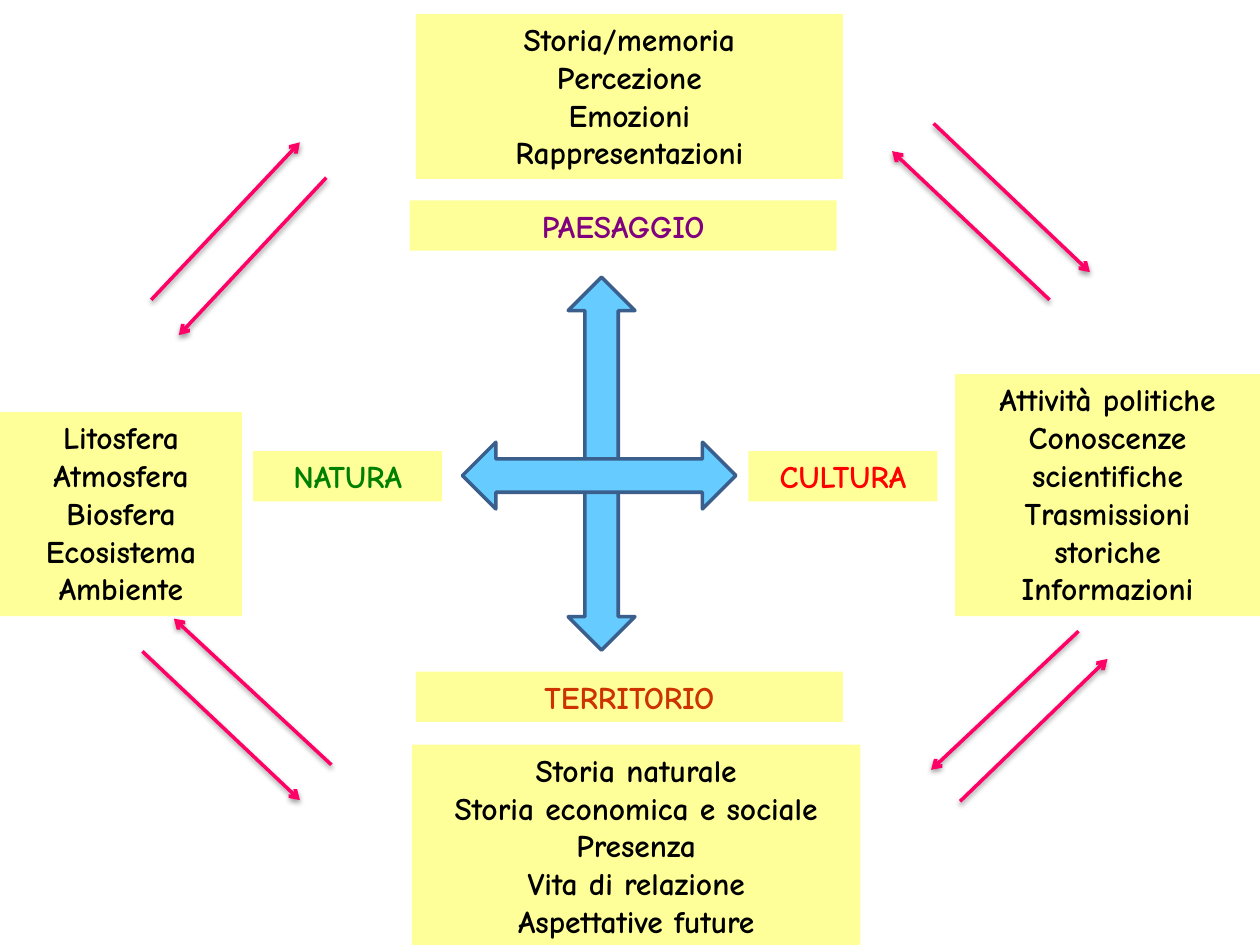
from dataclasses import dataclass

from lxml import etree
from pptx import Presentation
from pptx.dml.color import RGBColor
from pptx.enum.shapes import MSO_CONNECTOR, MSO_SHAPE
from pptx.enum.text import MSO_AUTO_SIZE, PP_ALIGN
from pptx.oxml import parse_xml
from pptx.oxml.ns import nsdecls, qn
from pptx.util import Inches, Pt

STRAIGHT = MSO_CONNECTOR.STRAIGHT
DOUBLE_ARROW = MSO_SHAPE.UP_DOWN_ARROW
CENTER = PP_ALIGN.CENTER
FIT_SHAPE = MSO_AUTO_SIZE.SHAPE_TO_FIT_TEXT
COLUMNS, ROWS = 100, 75


@dataclass(frozen=True)
class Theme:
    font: str = "Comic Neue"
    text_size: int = 18
    line_width: int = 2
    panel: str = "FFFF99"
    text: str = "000000"
    landscape: str = "800080"
    nature: str = "008000"
    territory: str = "CC3300"
    culture: str = "FF0000"
    flow: str = "FF0066"
    axis: str = "66CCFF"
    axis_edge: str = "3A5F8C"


class Diagram:
    def __init__(self, deck, theme):
        self.theme = theme
        self.slide = deck.slides.add_slide(deck.slide_layouts[6])
        self.column = deck.slide_width / COLUMNS
        self.row = deck.slide_height / ROWS

    def place(self, across, down):
        return round(across * self.column), round(down * self.row)

    def panel(self, left, top, width, height, lines, color):
        box = self.slide.shapes.add_textbox(
            *self.place(left, top), *self.place(width, height))
        box.fill.solid()
        box.fill.fore_color.rgb = RGBColor.from_string(self.theme.panel)
        frame = box.text_frame
        frame.word_wrap = True
        frame.auto_size = FIT_SHAPE
        for index, line in enumerate(lines):
            paragraph = frame.add_paragraph() if index else frame.paragraphs[0]
            paragraph.alignment = CENTER
            run = paragraph.add_run()
            run.text = line
            run.font.name = self.theme.font
            run.font.size = Pt(self.theme.text_size)
            run.font.bold = True
            run.font.color.rgb = RGBColor.from_string(color)

    def flow(self, start, end):
        arrow = self.slide.shapes.add_connector(
            STRAIGHT, *self.place(*start), *self.place(*end))
        arrow.line.color.rgb = RGBColor.from_string(self.theme.flow)
        arrow.line.width = Pt(self.theme.line_width)
        etree.SubElement(arrow.line._get_or_add_ln(), qn("a:tailEnd"), type="arrow")
        arrow._element.spPr.append(parse_xml(
            f'<a:effectLst {nsdecls("a")}>'
            f'<a:outerShdw blurRad="{Pt(3.1)}" dist="{Pt(1.6)}" dir="5400000" rotWithShape="0">'
            '<a:srgbClr val="000000"><a:alpha val="38000"/></a:srgbClr>'
            '</a:outerShdw></a:effectLst>'))

    def axis(self, left, top, width, height, rotation):
        arrow = self.slide.shapes.add_shape(
            DOUBLE_ARROW, *self.place(left, top), *self.place(width, height))
        arrow.shadow.inherit = False
        arrow.rotation = rotation
        arrow.fill.solid()
        arrow.fill.fore_color.rgb = RGBColor.from_string(self.theme.axis)
        arrow.line.color.rgb = RGBColor.from_string(self.theme.axis_edge)
        arrow.line.width = Pt(self.theme.line_width)


def main():
    deck = Presentation()
    deck.slide_width, deck.slide_height = Inches(10), Inches(7.5)
    theme = Theme()
    diagram = Diagram(deck, theme)

    topics = [
        (33, 1.1, 33.9, 13.1,
         ["Storia/memoria", "Percezione", "Emozioni", "Rappresentazioni"]),
        (0, 32.7, 19.2, 16.2,
         ["Litosfera", "Atmosfera", "Biosfera", "Ecosistema Ambiente"]),
        (75.8, 29.7, 24.2, 19.2,
         ["Attività politiche", "Conoscenze scientifiche",
          "Trasmissioni storiche", "Informazioni"]),
        (32.7, 59.1, 35.6, 16.2,
         ["Storia naturale", "Storia economica e sociale", "Presenza",
          "Vita di relazione", "Aspettative future"]),
    ]
    for *area, lines in topics:
        diagram.panel(*area, lines, theme.text)

    headings = [
        (32.5, 15.9, 33.9, "PAESAGGIO", theme.landscape),
        (20.1, 35.8, 15, "NATURA", theme.nature),
        (33, 53.3, 33.9, "TERRITORIO", theme.territory),
        (59.4, 35.8, 15, "CULTURA", theme.culture),
    ]
    for left, top, width, heading, color in headings:
        diagram.panel(left, top, width, 4, [heading], color)

    flows = [
        ((12, 23.8), (23.8, 11.3)), ((25.9, 14.1), (14.2, 26.6)),
        ((11.3, 51.7), (23.8, 63.5)), ((26.3, 60.7), (13.8, 49.1)),
        ((74.1, 9.8), (86.5, 21.6)), ((83.3, 23.8), (70.8, 12)),
        ((85.6, 50.1), (73.9, 61.1)), ((76.2, 63.6), (87.9, 52.3)),
    ]
    for start, end in flows:
        diagram.flow(start, end)

    diagram.axis(45.1, 22, 5.3, 29.6, 0)
    diagram.axis(44.9, 26.9, 5.3, 21.7, 90)
    deck.save("out.pptx")


if __name__ == "__main__":
    main()
